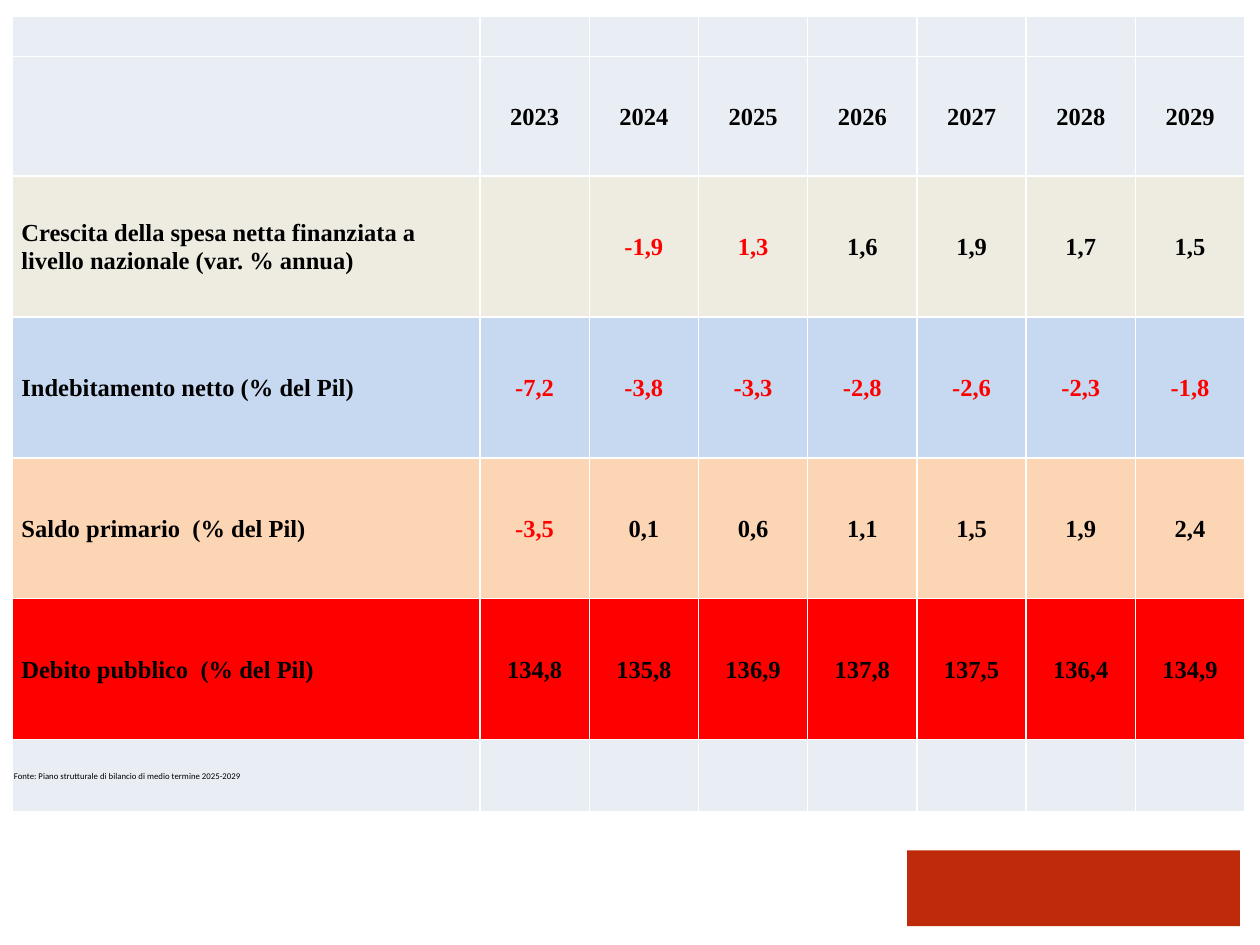
import collections
import dataclasses

import pptx
import pptx.dml.color
import pptx.enum.shapes
import pptx.enum.text
import pptx.oxml
import pptx.oxml.ns
import pptx.util

GRID_COLUMNS, GRID_ROWS = 1000, 750
Box = collections.namedtuple("Box", "left top width height")
Row = collections.namedtuple("Row", "height fill label values")


@dataclasses.dataclass(frozen=True)
class Theme:
    pale: str = "E9EDF4"
    sand: str = "EEECE1"
    sky: str = "C6D9F1"
    peach: str = "FCD5B5"
    red: str = "FF0000"
    brick: str = "BD2B0B"
    ink: str = "000000"
    border: str = "FFFFFF"
    border_width: float = 1
    body_font: str = "Times New Roman"
    body_size: float = 14
    source_font: str = "Calibri"
    source_size: float = 5


THEME = Theme()
YEARS = 7
LABEL_WIDTH = 371
EMPTY = [""] * YEARS
HIGHLIGHTED = {"1,3"}
SOURCE = "Fonte: Piano strutturale di bilancio di medio termine 2025-2029"
ROWS = [
    Row(32, THEME.pale, "", EMPTY),
    Row(95, THEME.pale, "", [str(2023 + step) for step in range(YEARS)]),
    Row(112, THEME.sand,
        "Crescita della spesa netta finanziata a livello nazionale (var. % annua)",
        ["", "-1,9", "1,3", "1,6", "1,9", "1,7", "1,5"]),
    Row(112, THEME.sky, "Indebitamento netto (% del Pil)",
        ["-7,2", "-3,8", "-3,3", "-2,8", "-2,6", "-2,3", "-1,8"]),
    Row(112, THEME.peach, "Saldo primario  (% del Pil)",
        ["-3,5", "0,1", "0,6", "1,1", "1,5", "1,9", "2,4"]),
    Row(112, THEME.red, "Debito pubblico  (% del Pil)",
        ["134,8", "135,8", "136,9", "137,8", "137,5", "136,4", "134,9"]),
    Row(57, THEME.pale, SOURCE, EMPTY),
]


def color(value):
    return pptx.dml.color.RGBColor.from_string(value)


def apply_format(target, values):
    for name, value in values.items():
        setattr(target, name, value)


def place(presentation, box):
    column = presentation.slide_width / GRID_COLUMNS
    row = presentation.slide_height / GRID_ROWS
    return [round(length * unit) for length, unit in zip(box, (column, row) * 2)]


def add_borders(cell):
    properties = cell._tc.get_or_add_tcPr()
    width = pptx.util.Pt(THEME.border_width)
    namespace = pptx.oxml.ns.nsdecls("a")
    for position, side in enumerate("LRTB"):
        properties.insert(position, pptx.oxml.parse_xml(
            f'<a:ln{side} {namespace} w="{width}"><a:solidFill>'
            f'<a:srgbClr val="{THEME.border}"/></a:solidFill></a:ln{side}>'))


def fill_cell(cell, text, fill, is_label):
    is_source = text == SOURCE
    indent = 0.07 if is_label and not is_source else 0.01
    apply_format(cell, {
        "margin_left": pptx.util.Inches(indent),
        "margin_top": pptx.util.Inches(0.01),
        "margin_right": pptx.util.Inches(0.01),
        "margin_bottom": 0,
        "vertical_anchor": pptx.enum.text.MSO_ANCHOR.MIDDLE,
    })
    cell.fill.solid()
    cell.fill.fore_color.rgb = color(fill)
    add_borders(cell)
    if not text:
        return
    paragraph = cell.text_frame.paragraphs[0]
    alignment = pptx.enum.text.PP_ALIGN
    paragraph.alignment = alignment.LEFT if is_label else alignment.CENTER
    run = paragraph.add_run()
    run.text = text
    apply_format(run.font, {
        "name": THEME.source_font if is_source else THEME.body_font,
        "size": pptx.util.Pt(THEME.source_size if is_source else THEME.body_size),
        "bold": not is_source,
    })
    highlighted = text.startswith("-") or text in HIGHLIGHTED
    run.font.color.rgb = color(THEME.red if highlighted else THEME.ink)


def add_budget_table(presentation, slide, box):
    left, top, width, height = place(presentation, box)
    table = slide.shapes.add_table(
        len(ROWS), YEARS + 1, left, top, width, height).table
    apply_format(table, {"first_row": False, "horz_banding": False})
    label_width = round(width * LABEL_WIDTH / box.width)
    table.columns[0].width = label_width
    for index in range(1, YEARS + 1):
        table.columns[index].width = round((width - label_width) / YEARS)
    total = sum(row.height for row in ROWS)
    for row_index, row in enumerate(ROWS):
        table.rows[row_index].height = round(height * row.height / total)
        for column_index, text in enumerate([row.label, *row.values]):
            fill_cell(table.cell(row_index, column_index), text, row.fill,
                      column_index == 0)


def add_corner_block(presentation, slide, box):
    shape = slide.shapes.add_shape(
        pptx.enum.shapes.MSO_SHAPE.RECTANGLE, *place(presentation, box))
    shape.shadow.inherit = False
    shape.fill.solid()
    shape.fill.fore_color.rgb = color(THEME.brick)
    shape.line.fill.background()


def main():
    presentation = pptx.Presentation()
    apply_format(presentation, {
        "slide_width": pptx.util.Inches(10),
        "slide_height": pptx.util.Inches(7.5),
    })
    slide = presentation.slides.add_slide(presentation.slide_layouts[6])
    add_corner_block(presentation, slide, Box(720, 675, 264, 60))
    add_budget_table(presentation, slide, Box(10, 13, 978, 631))
    presentation.save("out.pptx")


if __name__ == "__main__":
    main()
